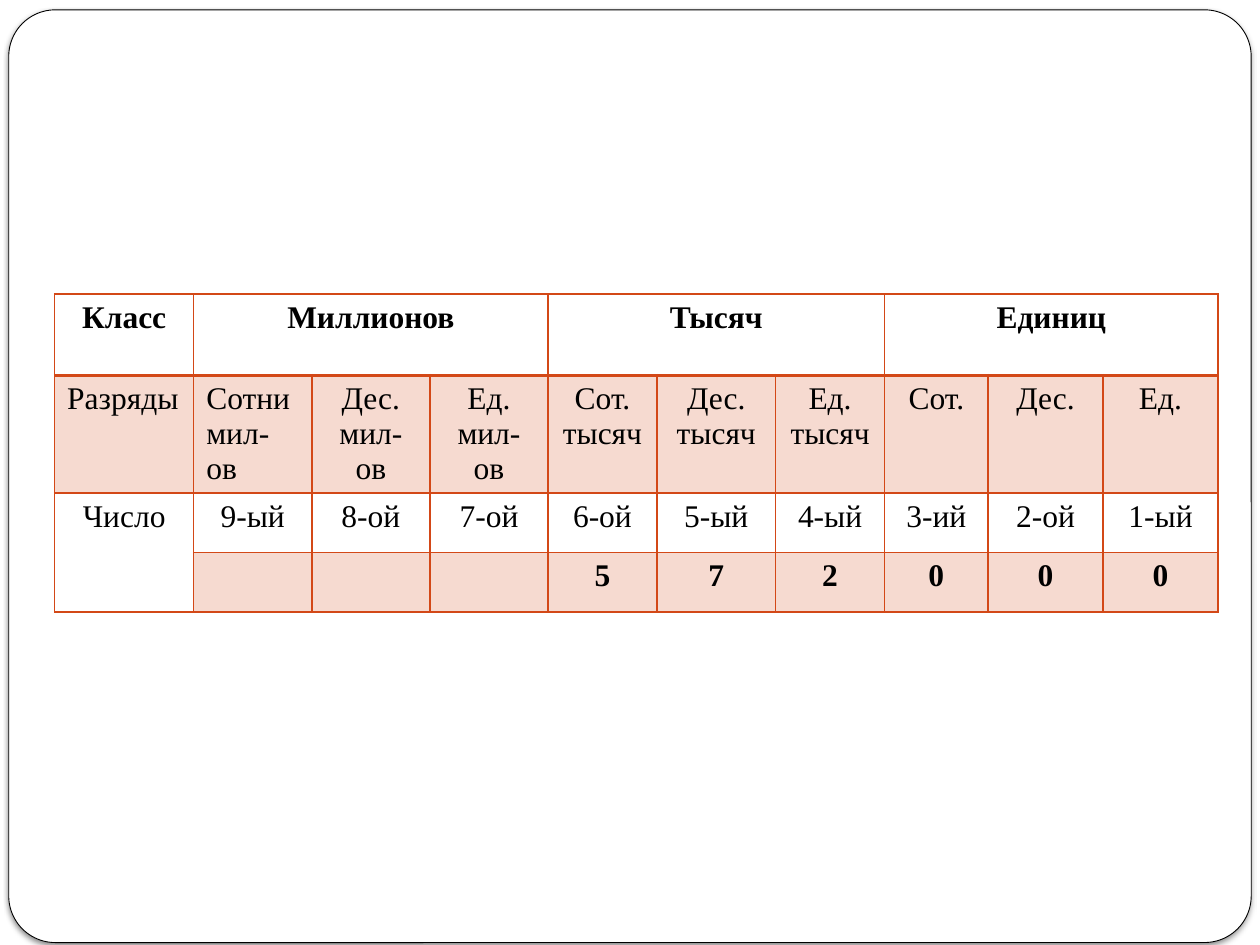
from dataclasses import dataclass

from lxml import etree
from pptx import Presentation
from pptx.dml.color import RGBColor
from pptx.enum.shapes import MSO_SHAPE
from pptx.enum.text import PP_ALIGN
from pptx.oxml import parse_xml
from pptx.oxml.ns import nsdecls, qn
from pptx.util import Pt

ROUNDED = MSO_SHAPE.ROUNDED_RECTANGLE
CENTER, LEFT = PP_ALIGN.CENTER, PP_ALIGN.LEFT
FONT = "Times New Roman"
COLORS = {"white": "FFFFFF", "black": "000000", "accent": "D34817"}
BORDER, HEADER_BORDER = 0.96, 1.98
COLUMN_WIDTHS = [79.5, 67.5, 67.5, 67.5, 62.2, 67.9, 62.2, 59.2, 65.6, 65.9]
ROW_HEIGHTS = [46.5, 67.2, 34, 34]
BANDED_ROWS = {1, 3}
CLASSES = ["Миллионов", "Тысяч", "Единиц"]
RANKS = ["Сотни\nмил-ов", "Дес.\nмил-ов", "Ед.\nмил-ов",
         "Сот.\nтысяч", "Дес.\nтысяч", "Ед.\nтысяч",
         "Сот.", "Дес.", "Ед."]
POSITIONS = ["9-ый", "8-ой", "7-ой", "6-ой", "5-ый", "4-ый", "3-ий", "2-ой", "1-ый"]
DIGITS = ["", "", "", "5", "7", "2", "0", "0", "0"]


@dataclass
class Entry:
    row: int
    column: int
    text: str
    bold: bool = False
    alignment: PP_ALIGN = CENTER
    row_span: int = 1
    column_span: int = 1


def color(name: str) -> RGBColor:
    return RGBColor.from_string(COLORS[name])


def draw_frame(slide) -> None:
    shape = slide.shapes.add_shape(ROUNDED, Pt(5), Pt(5.6), Pt(710), Pt(533))
    shape.adjustments[0] = 0.05
    shape.fill.solid()
    shape.fill.fore_color.rgb = color("white")
    shape.line.color.rgb = color("black")
    shape.line.width = Pt(0.5)
    shape.shadow.inherit = False
    effects = shape.element.spPr.find(qn("a:effectLst"))
    effects.append(parse_xml(
        f'<a:outerShdw {nsdecls("a")} blurRad="{Pt(3)}" dist="{Pt(2)}" dir="5400000">'
        f'<a:srgbClr val="{COLORS["black"]}"><a:alpha val="50000"/></a:srgbClr></a:outerShdw>'))


def format_cell(cell, row: int) -> None:
    if row in BANDED_ROWS:
        cell.fill.solid()
        cell.fill.fore_color.rgb = color("accent")
    else:
        cell.fill.background()
    properties = cell._tc.get_or_add_tcPr()
    for fill_color in properties.iter(qn("a:srgbClr")):
        etree.SubElement(fill_color, qn("a:alpha")).set("val", "20000")
    widths = {"lnL": BORDER, "lnR": BORDER,
              "lnT": HEADER_BORDER if row == 1 else BORDER,
              "lnB": HEADER_BORDER if row == 0 else BORDER}
    for index, (side, width) in enumerate(widths.items()):
        properties.insert(index, parse_xml(
            f'<a:{side} {nsdecls("a")} w="{Pt(width)}"><a:solidFill>'
            f'<a:srgbClr val="{COLORS["accent"]}"/></a:solidFill></a:{side}>'))


def write_entry(table, entry: Entry) -> None:
    cell = table.cell(entry.row, entry.column)
    if entry.row_span > 1 or entry.column_span > 1:
        cell.merge(table.cell(entry.row + entry.row_span - 1,
                              entry.column + entry.column_span - 1))
    cell.text = entry.text
    for paragraph in cell.text_frame.paragraphs:
        paragraph.alignment = entry.alignment
        paragraph.font.name = FONT
        paragraph.font.size = Pt(18)
        paragraph.font.bold = entry.bold
        paragraph.font.color.rgb = color("black")


def table_entries() -> list[Entry]:
    entries = [Entry(0, 0, "Класс", bold=True),
               Entry(1, 0, "Разряды", alignment=LEFT),
               Entry(2, 0, "Число", row_span=2)]
    for index, text in enumerate(CLASSES):
        entries.append(Entry(0, 1 + 3 * index, text, bold=True, column_span=3))
    for row, texts in enumerate([RANKS, POSITIONS, DIGITS], start=1):
        for column, text in enumerate(texts, start=1):
            alignment = LEFT if (row, column) == (1, 1) else CENTER
            entries.append(Entry(row, column, text, row == 3, alignment))
    return entries


def draw_table(slide) -> None:
    table = slide.shapes.add_table(
        len(ROW_HEIGHTS), len(COLUMN_WIDTHS), Pt(31.2), Pt(168),
        Pt(sum(COLUMN_WIDTHS)), Pt(sum(ROW_HEIGHTS))).table
    table.first_row = False
    table.horz_banding = False
    for column, width in zip(table.columns, COLUMN_WIDTHS):
        column.width = Pt(width)
    for index, (row, height) in enumerate(zip(table.rows, ROW_HEIGHTS)):
        row.height = Pt(height)
        for cell in row.cells:
            format_cell(cell, index)
    for entry in table_entries():
        write_entry(table, entry)


def main() -> None:
    presentation = Presentation()
    presentation.slide_width = Pt(720)
    presentation.slide_height = Pt(540)
    slide = presentation.slides.add_slide(presentation.slide_layouts[6])
    draw_frame(slide)
    draw_table(slide)
    presentation.save("out.pptx")


if __name__ == "__main__":
    main()
